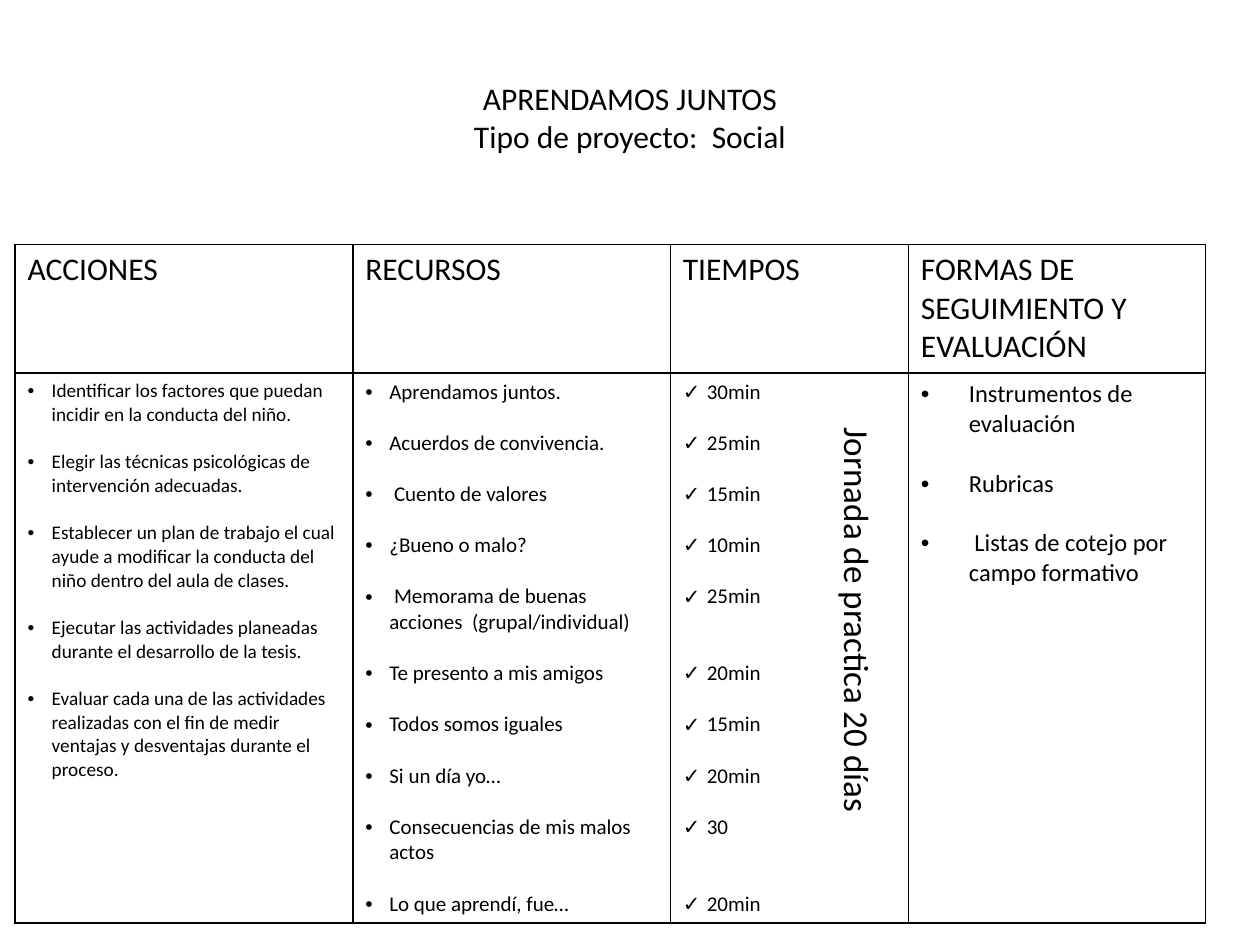
"""Build the project planning slide with its four-column table."""
from dataclasses import dataclass

from lxml.etree import SubElement
from pptx import Presentation
from pptx.dml.color import RGBColor
from pptx.enum.text import MSO_ANCHOR, PP_ALIGN
from pptx.oxml import parse_xml
from pptx.oxml.ns import nsdecls, qn
from pptx.util import Inches, Pt

FONT = "Calibri"
INK = "000000"
LINE_HEIGHT = 1.22
SLIDE_WIDTH, SLIDE_HEIGHT = Inches(10), Inches(7.5)
TABLE_LEFT, TABLE_TOP = Inches(0.12), Inches(1.94)
ROW_HEIGHTS = (Inches(1.02), Inches(4.36))


@dataclass(frozen=True)
class Column:
    """A table column: heading, listed items and their formatting."""
    heading: str
    width: float
    items: tuple[str, ...]
    size: int
    indent: float = 0.19
    bullet: str = "•"
    wide_gaps: tuple[int, ...] = ()


COLUMNS = (
    Column("ACCIONES", 2.68, (
        "Identificar los factores que puedan incidir en la conducta del niño.",
        "Elegir las técnicas psicológicas de intervención adecuadas.",
        "Establecer un plan de trabajo el cual ayude a modificar la conducta del "
        "niño dentro del aula de clases.",
        "Ejecutar las actividades planeadas durante el desarrollo de la tesis.",
        "Evaluar cada una de las actividades realizadas con el fin de medir "
        "ventajas y desventajas durante el proceso.",
    ), 11),
    Column("RECURSOS", 2.52, (
        "Aprendamos juntos.",
        "Acuerdos de convivencia.",
        " Cuento de valores",
        "¿Bueno o malo?",
        " Memorama de buenas acciones  (grupal/individual)",
        "Te presento a mis amigos",
        "Todos somos iguales",
        "Si un día yo…",
        "Consecuencias de mis malos actos",
        "Lo que aprendí, fue…",
    ), 12),
    Column("TIEMPOS", 1.89, (
        "30min", "25min", "15min", "10min", "25min",
        "20min", "15min", "20min", "30", "20min",
    ), 12, bullet="✓", wide_gaps=(5, 9)),
    Column("FORMAS DE SEGUIMIENTO Y EVALUACIÓN", 2.36, (
        "Instrumentos de evaluación",
        "Rubricas",
        " Listas de cotejo por campo formativo",
    ), 14, indent=0.38),
)


def color(value: str) -> RGBColor:
    """Turn a hex string into a colour."""
    return RGBColor.from_string(value)


def format_runs(frame, size: int) -> None:
    """Give every run in a text frame the slide's font and colour."""
    for paragraph in frame.paragraphs:
        for run in paragraph.runs:
            run.font.name = FONT
            run.font.size = Pt(size)
            run.font.color.rgb = color(INK)


def add_bullet(paragraph, character: str, indent: float) -> None:
    """Hang a paragraph from a bullet character."""
    properties = paragraph._p.get_or_add_pPr()
    properties.set("marL", str(Inches(indent)))
    properties.set("indent", str(-Inches(indent)))
    SubElement(properties, qn("a:buFont"), typeface="Arial")
    SubElement(properties, qn("a:buChar"), char=character)


def style_cell(cell) -> None:
    """Clear a cell's fill and draw its four borders."""
    cell.fill.background()
    properties = cell._tc.get_or_add_tcPr()
    for position, side in enumerate("LRTB"):
        properties.insert(position, parse_xml(
            f'<a:ln{side} {nsdecls("a")} w="{Pt(1)}"><a:solidFill>'
            f'<a:srgbClr val="{INK}"/></a:solidFill></a:ln{side}>'))


def fill_list(frame, column: Column) -> None:
    """Write a column's items as a list with one or two lines between them."""
    frame.text = "\n".join(column.items)
    for index, paragraph in enumerate(frame.paragraphs):
        add_bullet(paragraph, column.bullet, column.indent)
        if index:
            blank_lines = 2 if index in column.wide_gaps else 1
            paragraph.space_before = Pt(blank_lines * LINE_HEIGHT * column.size)
    format_runs(frame, column.size)


def add_plan(slide) -> None:
    """Add the table of actions, resources, times and evaluation."""
    width = Inches(sum(column.width for column in COLUMNS))
    plan = slide.shapes.add_table(len(ROW_HEIGHTS), len(COLUMNS), TABLE_LEFT,
                                  TABLE_TOP, width, sum(ROW_HEIGHTS)).table
    plan.first_row = plan.horz_banding = False
    for row, height in zip(plan.rows, ROW_HEIGHTS):
        row.height = height
    for index, column in enumerate(COLUMNS):
        plan.columns[index].width = Inches(column.width)
        heading, listing = plan.cell(0, index), plan.cell(1, index)
        heading.text_frame.text = column.heading
        format_runs(heading.text_frame, 18)
        fill_list(listing.text_frame, column)
        style_cell(heading)
        style_cell(listing)


def add_title(slide) -> None:
    """Place the project's name and type in the title placeholder."""
    title = slide.shapes.title
    title.left, title.top = int(SLIDE_WIDTH * 0.05), int(SLIDE_HEIGHT * 0.04)
    title.width, title.height = int(SLIDE_WIDTH * 0.9), Inches(1.25)
    frame = title.text_frame
    frame.text = "APRENDAMOS JUNTOS\vTipo de proyecto:  Social"
    frame.vertical_anchor = MSO_ANCHOR.MIDDLE
    frame.paragraphs[0].alignment = PP_ALIGN.CENTER
    format_runs(frame, 18)


def add_duration(slide) -> None:
    """Add the turned note beside the times."""
    duration = slide.shapes.add_textbox(Inches(5.08), Inches(4.8),
                                        Inches(3.45), Inches(0.44))
    duration.rotation = 90
    duration.text_frame.word_wrap = True
    duration.text_frame.text = "Jornada de practica 20 días"
    format_runs(duration.text_frame, 20)


def main() -> None:
    """Build and save the slide."""
    deck = Presentation()
    deck.slide_width, deck.slide_height = SLIDE_WIDTH, SLIDE_HEIGHT
    slide = deck.slides.add_slide(deck.slide_layouts[5])
    add_plan(slide)
    add_title(slide)
    add_duration(slide)
    deck.save("out.pptx")


if __name__ == "__main__":
    main()
